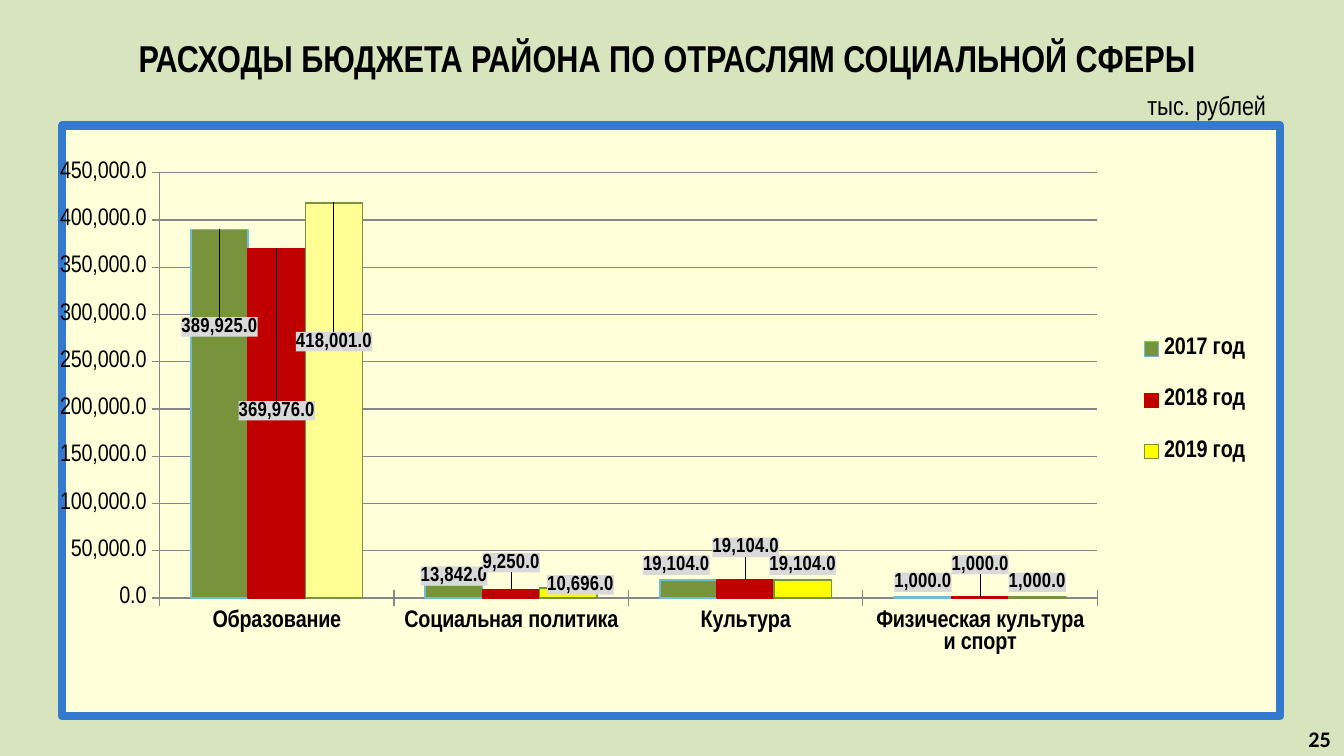
from lxml import etree
from pptx import Presentation
from pptx.chart.data import CategoryChartData
from pptx.dml.color import RGBColor
from pptx.enum.chart import XL_CHART_TYPE, XL_LABEL_POSITION, XL_LEGEND_POSITION, XL_TICK_MARK
from pptx.enum.text import MSO_ANCHOR, PP_ALIGN
from pptx.util import Pt

COLUMNS = XL_CHART_TYPE.COLUMN_CLUSTERED
OUTSIDE = XL_LABEL_POSITION.OUTSIDE_END
RIGHT_LEGEND = XL_LEGEND_POSITION.RIGHT
CROSS = XL_TICK_MARK.CROSS
TOP, MIDDLE = MSO_ANCHOR.TOP, MSO_ANCHOR.MIDDLE
CENTER, RIGHT = PP_ALIGN.CENTER, PP_ALIGN.RIGHT
NARROW = "Arial Narrow"
NUMBERS = "#,##0.0"
NAMESPACES = ('xmlns:c="http://schemas.openxmlformats.org/drawingml/2006/chart" '
              'xmlns:a="http://schemas.openxmlformats.org/drawingml/2006/main"')


def style(item, text=None, size=13, bold=False, font=NARROW, color="000000",
          align=CENTER, anchor=TOP):
    if text is not None:
        frame = item.text_frame
        frame.word_wrap = True
        frame.vertical_anchor = anchor
        para = frame.paragraphs[0]
        para.alignment = align
        span = para.add_run()
        span.text = text
        item = span
    item.font.size = Pt(size)
    item.font.bold = bold
    item.font.name = font
    item.font.color.rgb = RGBColor.from_string(color)


def chart_xml(tag, body="", attributes=""):
    return etree.fromstring(f"<c:{tag} {NAMESPACES} {attributes}>{body}</c:{tag}>")


deck = Presentation()
deck.slide_width, deck.slide_height = Pt(720), Pt(405)
page = deck.slides.add_slide(deck.slide_layouts[5])
page.background.fill.solid()
page.background.fill.fore_color.rgb = RGBColor.from_string("D7E4BD")

title = page.shapes.title
title.left, title.top, title.width, title.height = Pt(20), Pt(15), Pt(675), Pt(17)
style(title, "РАСХОДЫ БЮДЖЕТА РАЙОНА ПО ОТРАСЛЯМ СОЦИАЛЬНОЙ СФЕРЫ", size=20, bold=True)

data = CategoryChartData(number_format=NUMBERS)
data.categories = ["Образование", "Социальная политика", "Культура", "Физическая культура и спорт"]
data.add_series("2017 год", [389925, 13842, 19104, 1000])
data.add_series("2018 год", [369976, 9250, 19104, 1000])
data.add_series("2019 год", [418001, 10696, 19104, 1000])
chart = page.shapes.add_chart(COLUMNS, Pt(31), Pt(65), Pt(657), Pt(321), data).chart
style(chart, size=18, font="Calibri")
chart.has_title = False
chart_part = chart._chartSpace.find("{*}chart")
chart_part.addnext(chart_xml("spPr", (
    '<a:solidFill><a:srgbClr val="FFFFD9"/></a:solidFill>'
    '<a:ln w="57150"><a:solidFill><a:srgbClr val="3379CD"/></a:solidFill></a:ln>')))

plot = chart.plots[0]
plot.gap_width, plot.overlap = 110, 0
plot.vary_by_categories = False

values, categories = chart.value_axis, chart.category_axis
values.minimum_scale, values.maximum_scale, values.major_unit = 0, 450000, 50000
values.has_major_gridlines = True
values.tick_labels.number_format = NUMBERS
values.tick_labels.number_format_is_linked = False
for axis, bold in ((values, False), (categories, True)):
    axis.major_tick_mark = CROSS
    style(axis.tick_labels, bold=bold)
for line in (values.format.line, categories.format.line, values.major_gridlines.format.line):
    line.width = Pt(0.75)
    line.color.rgb = RGBColor.from_string("868686")

chart.has_legend = True
chart.legend.position = RIGHT_LEGEND
chart.legend.include_in_layout = False
style(chart.legend, bold=True)

plot_area = chart_part.find("{*}plotArea")
legend_part = chart_part.find("{*}legend")
for part, place, target in (
        (plot_area, (0.08, 0.08, 0.77, 0.72), '<c:layoutTarget val="inner"/>'),
        (legend_part, (0.87, 0.31, 0.12, 0.31), "")):
    for old in part.findall("{*}layout"):
        part.remove(old)
    modes = '<c:xMode val="edge"/><c:yMode val="edge"/>'
    sizes = "".join(f'<c:{key} val="{value}"/>' for key, value in zip("xywh", place))
    layout = chart_xml("layout", f"<c:manualLayout>{target}{modes}{sizes}</c:manualLayout>")
    part.insert(0 if part is plot_area else 1, layout)

looks = [("77933C", "70BDD2", 1), ("C00000", "C00000", 0.75), ("FFFF00", "77933C", 0.75)]
label_shifts = [
    [(0, 0.19), (0, 0.01), (-0.01, 0), (0, 0)],
    [(0, 0.3), (0, -0.02), (0, -0.03), (0, -0.03)],
    [(0, 0.26), (0.01, 0.02), (0, 0), (0, 0)],
]
for series, (fill, edge, width), shifts in zip(plot.series, looks, label_shifts):
    series.invert_if_negative = False
    for index, (x, y) in enumerate(shifts):
        point = series.points[index]
        pale = fill == "FFFF00" and index == 0
        point.format.fill.solid()
        point.format.fill.fore_color.rgb = RGBColor.from_string("FFFF93" if pale else fill)
        point.format.line.color.rgb = RGBColor.from_string(edge)
        point.format.line.width = Pt(width)
        style(point.data_label, size=11, bold=True)
        point.data_label.position = OUTSIDE
        label = series._element.findall("{*}dLbls/{*}dLbl")[index]
        for old in label.findall("{*}spPr"):
            label.remove(old)
        shift = f'<c:manualLayout><c:x val="{x}"/><c:y val="{y}"/></c:manualLayout>'
        label.insert(1, chart_xml("layout", shift))
        label.insert(2, chart_xml("numFmt", attributes=f'formatCode="{NUMBERS}" sourceLinked="0"'))
        label.insert(3, chart_xml("spPr", '<a:solidFill><a:srgbClr val="D9D9D9"/></a:solidFill>'))
    series.format.fill.solid()
    series.format.fill.fore_color.rgb = RGBColor.from_string(fill)
    series.format.line.color.rgb = RGBColor.from_string(edge)
    series.format.line.width = Pt(width)

unit_box = page.shapes.add_textbox(Pt(592.5), Pt(44), Pt(108), Pt(24.5))
style(unit_box, "тыс. рублей", size=14, anchor=MIDDLE)
number_box = page.shapes.add_textbox(Pt(672), Pt(385), Pt(48), Pt(19))
style(number_box, "25", size=11.9, bold=True, font="Calibri", align=RIGHT)

deck.save("out.pptx")
